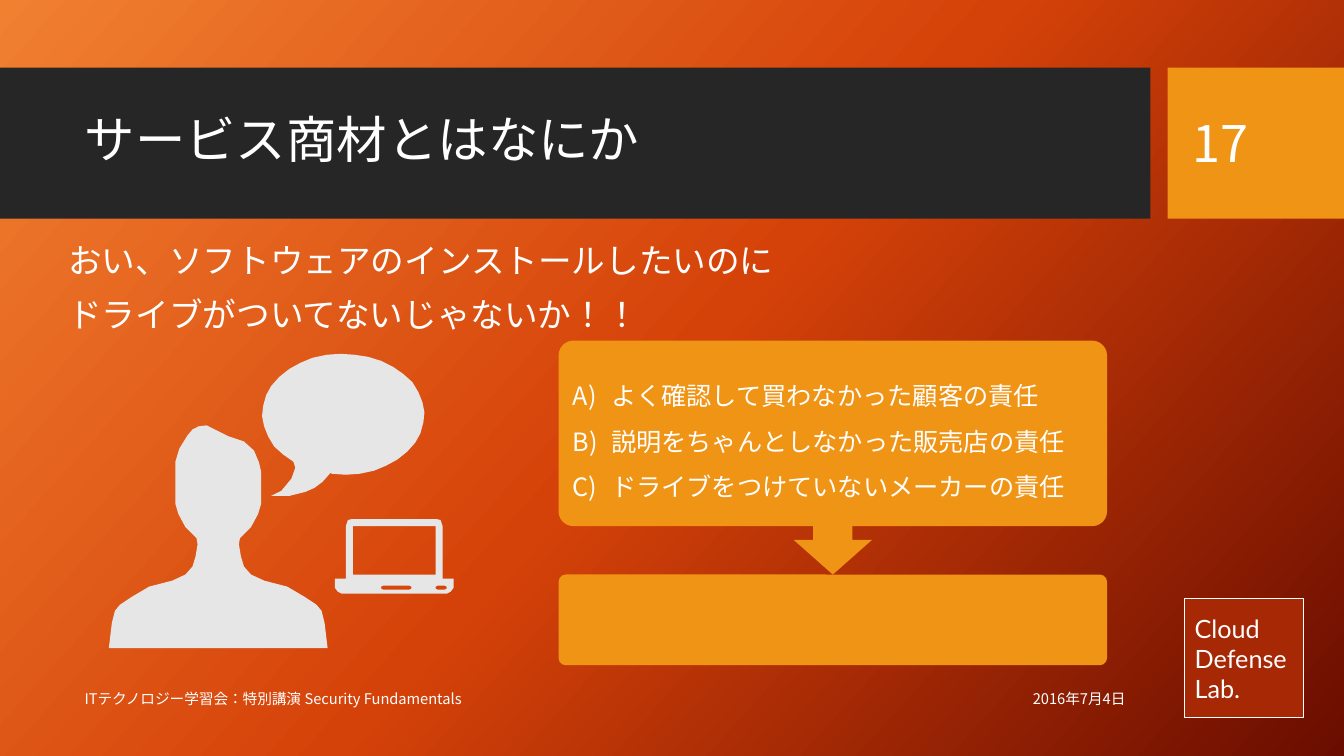
"""Build the slide on what a service product is."""
from copy import deepcopy
from math import cos, radians, sin

from lxml.etree import SubElement
from pptx import Presentation
from pptx.dml.color import RGBColor
from pptx.enum.lang import MSO_LANGUAGE_ID as LANGUAGE
from pptx.enum.shapes import MSO_SHAPE as SHAPE
from pptx.enum.text import MSO_ANCHOR as ANCHOR, MSO_AUTO_SIZE as AUTO, PP_ALIGN as ALIGN
from pptx.oxml.ns import qn
from pptx.util import Inches, Pt

WHITE = RGBColor(0xFF, 0xFF, 0xFF)
CHARCOAL = RGBColor(0x26, 0x26, 0x26)
AMBER = RGBColor(0xF0, 0x94, 0x15)
RUST = RGBColor(0xA6, 0x28, 0x05)
PALE_GRAY = RGBColor(0xE7, 0xE6, 0xE6)
BACKDROP = [(0, RGBColor(0xF1, 0x80, 0x31)), (0.5, RGBColor(0xD5, 0x42, 0x09)),
            (1, RGBColor(0x6A, 0x0D, 0x00))]
JAPANESE = "Noto Sans CJK JP"

deck = Presentation()
deck.slide_width, deck.slide_height = Inches(13.33), Inches(7.5)
slide = deck.slides.add_slide(deck.slide_layouts[5])
shapes = slide.shapes


def paint(shape, color):
    """Give a shape a flat fill without line or shadow."""
    shape.shadow.inherit = False
    shape.fill.solid()
    shape.fill.fore_color.rgb = color
    shape.line.fill.background()


def write(shape, lines, size, font=JAPANESE, anchor=ANCHOR.MIDDLE, wrap=True, **layout):
    """Fill a shape with white paragraphs."""
    frame = shape.text_frame
    frame.text = "\n".join(lines)
    frame.word_wrap, frame.vertical_anchor = wrap, anchor
    lettering = {"size": Pt(size), "name": font, "bold": False, "language_id": LANGUAGE.JAPANESE}
    for paragraph in frame.paragraphs:
        for key, value in {"alignment": ALIGN.LEFT, **layout}.items():
            setattr(paragraph, key, value)
        run = paragraph.runs[0]
        for key, value in lettering.items():
            setattr(run.font, key, value)
        run.font.color.rgb = WHITE
        SubElement(run.font._element, qn("a:ea"), typeface=font)


backdrop = slide.background.fill
backdrop.gradient()
stop_list = backdrop._fill._gradFill.find(qn("a:gsLst"))
stop_list.append(deepcopy(stop_list[0]))
for stop, (position, color) in zip(backdrop.gradient_stops, BACKDROP):
    stop.position, stop.color.rgb = position, color
backdrop.gradient_angle = 360 - 42

lab_badge, title_band, number_band, answers, arrow, conclusion = [
    shapes.add_shape(kind, *map(Inches, box)) for kind, box in [
        (SHAPE.RECTANGLE, (11.75, 5.94, 1.18, 1.18)),
        (SHAPE.RECTANGLE, (0, 0.67, 11.41, 1.5)),
        (SHAPE.RECTANGLE, (11.58, 0.67, 1.75, 1.5)),
        (SHAPE.ROUNDED_RECTANGLE, (5.54, 3.38, 5.44, 1.84)),
        (SHAPE.DOWN_ARROW, (7.87, 5.01, 0.78, 0.69)),
        (SHAPE.ROUNDED_RECTANGLE, (5.54, 5.7, 5.44, 0.9)),
    ]]
for panel in (number_band, answers, arrow, conclusion):
    paint(panel, AMBER)
paint(title_band, CHARCOAL)
paint(lab_badge, RUST)
lab_badge.line.color.rgb, lab_badge.line.width = WHITE, Pt(1)
write(lab_badge, ["Cloud", "Defense", "Lab."], 18, "Lato")

for box in (answers, conclusion):
    box.adjustments[0] = 0.08
write(answers, ["よく確認して買わなかった顧客の責任", "説明をちゃんとしなかった販売店の責任",
                "ドライブをつけていないメーカーの責任"], 18, line_spacing=1.5)
for answer in answers.text_frame.paragraphs:
    properties = answer._p.get_or_add_pPr()
    properties.set("marL", str(Inches(0.38)))
    properties.set("indent", str(-Inches(0.38)))
    SubElement(properties, qn("a:buFont"), typeface="+mj-lt")
    SubElement(properties, qn("a:buAutoNum"), type="alphaUcParenR")

title = shapes.title
title.left, title.top, title.width, title.height = map(Inches, (0.74, 0.82, 10.51, 1.18))
shapes._spTree.append(title._element)
write(title, ["サービス商材とはなにか"], 36, line_spacing=0.9)

for box, text, size, alignment in [
    ((8.26, 6.73, 3, 0.4), "2016年7月4日", 10.5, ALIGN.RIGHT),
    ((0.74, 6.73, 7.51, 0.4), "ITテクノロジー学習会：特別講演 Security Fundamentals", 10.5, ALIGN.LEFT),
    ((11.73, 0.82, 1.26, 1.19), "17", 36, ALIGN.LEFT),
]:
    write(shapes.add_textbox(*map(Inches, box)), [text], size, alignment=alignment)

complaint = shapes.add_textbox(*map(Inches, (0.58, 2.33, 7.27, 1.05)))
write(complaint, ["おい、ソフトウェアのインストールしたいのに", "ドライブがついてないじゃないか！！"],
      24, anchor=ANCHOR.TOP, wrap=False)
complaint.text_frame.paragraphs[1].space_before = Pt(10)
complaint.text_frame.auto_size = AUTO.SHAPE_TO_FIT_TEXT

hair = [(174, 458), (178, 445), (186, 432), (191, 426), (197, 423), (205, 422), (227, 433),
        (242, 438), (252, 447), (257, 459)]
right_side = [(259, 468), (259, 500), (256, 510), (249, 523), (238, 534), (237, 540), (239, 552),
              (242, 562), (249, 570), (262, 576), (285, 582), (302, 592), (314, 600), (319, 606),
              (322, 618), (325, 643)]
person = hair + right_side + [(433 - x, y) for x, y in reversed(right_side)]

bubble_rim = [(round(340.5 + 80.5 * cos(radians(angle))), round(411 + 60 * sin(radians(angle))))
              for angle in range(128, 460, 10)]
bubble_tail = [(328, 469), (320, 478), (312, 484), (303, 488), (287, 492), (269, 492),
               (279, 487), (289, 475), (293, 464)]
speech_bubble = bubble_rim + bubble_tail

laptop_right = [(433, 515), (437, 516), (439, 522), (439, 574), (450, 574), (450, 583),
                (447, 587), (443, 589)]
laptop_case = laptop_right + [(782 - x, y) for x, y in reversed(laptop_right)]
laptop_screen = [(350, 522), (350, 570), (432, 570), (432, 522)]
laptop_slots = [
    [(left + 2, 581), (left, 582), (left, 584), (left + 2, 585),
     (right - 2, 585), (right, 584), (right, 582), (right - 2, 581)]
    for left, right in [(378, 408), (432, 443)]]

for first, *others in ([person, speech_bubble], [laptop_case, laptop_screen, *laptop_slots]):
    pen = shapes.build_freeform(*first[0], scale=Inches(0.01))
    pen.add_line_segments(first[1:], close=True)
    for outline in others:
        pen.move_to(*outline[0])
        pen.add_line_segments(outline[1:], close=True)
    paint(pen.convert_to_shape(), PALE_GRAY)

deck.save("out.pptx")
